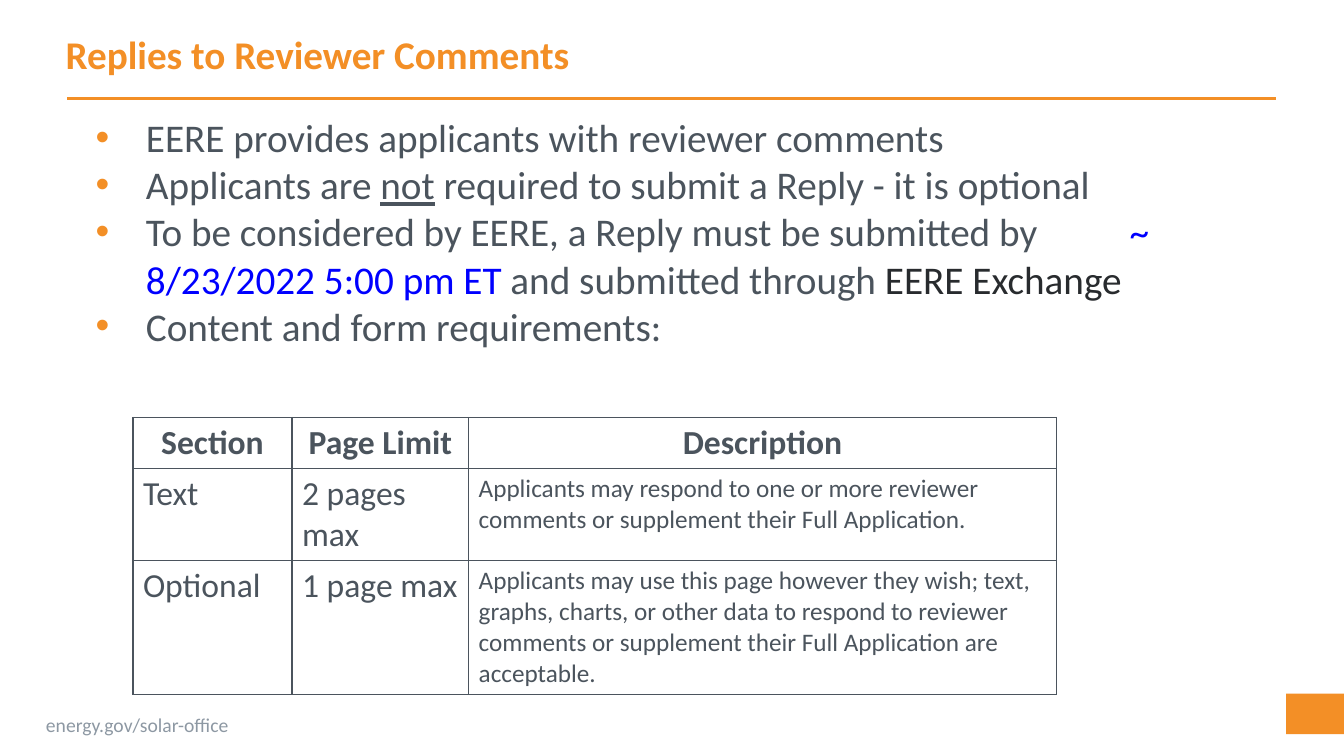
import dataclasses

import lxml.etree
import pptx
import pptx.dml.color
import pptx.enum.shapes
import pptx.enum.text
import pptx.oxml.ns
import pptx.util

Cm = pptx.util.Cm
Pt = pptx.util.Pt
qn = pptx.oxml.ns.qn
ALIGN = pptx.enum.text.PP_ALIGN
ANCHOR = pptx.enum.text.MSO_ANCHOR


@dataclasses.dataclass(frozen=True)
class Theme:
    font: str = "Calibri"
    orange: str = "F38F26"
    slate: str = "4B545D"
    dark: str = "282B2E"
    blue: str = "0000FF"
    grey: str = "8D98A3"
    white: str = "FFFFFF"
    large: int = 28
    medium: int = 24
    small: int = 18
    footer: int = 14


THEME = Theme()

# Each bullet is a list of (text, colour, underline)
BULLETS = [
    [("EERE provides applicants with reviewer comments", THEME.slate, False)],
    [("Applicants are ", THEME.slate, False),
     ("not", THEME.slate, True),
     (" required to submit a Reply - it is optional", THEME.slate, False)],
    [("To be considered by EERE, a Reply must be submitted by\t", THEME.slate, False),
     ("~ 8/23/2022 5:00 pm ET ", THEME.blue, False),
     ("and submitted through ", THEME.slate, False),
     ("EERE Exchange", THEME.dark, False)],
    [("Content and form requirements:", THEME.slate, False)],
]

REQUIREMENTS = [
    ("Section", "Page Limit", "Description"),
    ("Text", "2 pages max",
     "Applicants may respond to one or more reviewer comments or supplement "
     "their Full Application."),
    ("Optional", "1 page max",
     "Applicants may use this page however they wish; text, graphs, charts, or "
     "other data to respond to reviewer comments or supplement their Full "
     "Application are acceptable."),
]


def rgb(color):
    return pptx.dml.color.RGBColor.from_string(color)


def add_xml(parent, tag, **attrs):
    return lxml.etree.SubElement(parent, qn(tag), attrs)


def add_run(p, text, size, color, **extra):
    r = p.add_run()
    r.text = text
    formats = {"name": THEME.font, "size": Pt(size), "bold": False, **extra}
    for name, value in formats.items():
        setattr(r.font, name, value)
    r.font.color.rgb = rgb(color)


def set_frame(tf, **extra):
    formats = {"word_wrap": True, "vertical_anchor": ANCHOR.TOP,
               "auto_size": pptx.enum.text.MSO_AUTO_SIZE.NONE, **extra}
    for name, value in formats.items():
        setattr(tf, name, value)


def add_rule(s, x1, x2, y):
    sp = s.shapes.add_connector(
        pptx.enum.shapes.MSO_CONNECTOR.STRAIGHT, Cm(x1), Cm(y), Cm(x2), Cm(y))
    sp.line.color.rgb = rgb(THEME.orange)
    sp.line.width = Pt(2)
    add_xml(sp._element.spPr, "a:effectLst")


def add_block(s, *box):
    sp = s.shapes.add_shape(
        pptx.enum.shapes.MSO_SHAPE.RECTANGLE, *map(Cm, box))
    sp.shadow.inherit = False
    sp.fill.solid()
    sp.fill.fore_color.rgb = rgb(THEME.orange)
    sp.line.fill.background()


def add_footer(s, text, *box):
    tf = s.shapes.add_textbox(*map(Cm, box)).text_frame
    set_frame(tf, word_wrap=False)
    add_run(tf.paragraphs[0], text, THEME.footer, THEME.grey)


def format_title(s, text, *box):
    sp = s.shapes.title
    for name, value in zip(("left", "top", "width", "height"), box):
        setattr(sp, name, Cm(value))
    set_frame(sp.text_frame)
    p = sp.text_frame.paragraphs[0]
    p.alignment = ALIGN.LEFT
    add_run(p, text, THEME.large, THEME.orange, bold=True)


def set_bullet(p, indent, tab):
    pPr = p._p.get_or_add_pPr()
    pPr.set("marL", str(Cm(indent)))
    pPr.set("indent", str(-Cm(indent)))
    add_xml(add_xml(pPr, "a:buClr"), "a:srgbClr", val=THEME.orange)
    add_xml(pPr, "a:buFont", typeface="Arial")
    add_xml(pPr, "a:buChar", char="•")
    add_xml(add_xml(pPr, "a:tabLst"), "a:tab", pos=str(Cm(tab)), algn="l")


def add_bullets(s, bullets, *box):
    tf = s.shapes.add_textbox(*map(Cm, box)).text_frame
    set_frame(tf)
    for i, runs in enumerate(bullets):
        p = tf.add_paragraph() if i else tf.paragraphs[0]
        set_bullet(p, 1.27, 26.06)
        for text, color, underline in runs:
            add_run(p, text, THEME.large, color, underline=underline)


def format_cell(cell):
    tcPr = cell._tc.get_or_add_tcPr()
    for side in ("a:lnL", "a:lnR", "a:lnT", "a:lnB"):
        ln = add_xml(tcPr, side, w=str(Pt(1)))
        add_xml(add_xml(ln, "a:solidFill"), "a:srgbClr", val=THEME.slate)
    cell.fill.solid()
    cell.fill.fore_color.rgb = rgb(THEME.white)


def add_requirements(s, rows, left, top, widths, heights):
    table = s.shapes.add_table(
        len(rows), len(widths), Cm(left), Cm(top),
        Cm(sum(widths)), Cm(sum(heights))).table
    for column, width in zip(table.columns, widths):
        column.width = Cm(width)
    for i, (texts, height) in enumerate(zip(rows, heights)):
        table.rows[i].height = Cm(height)
        for j, text in enumerate(texts):
            cell = table.cell(i, j)
            format_cell(cell)
            header = i == 0
            p = cell.text_frame.paragraphs[0]
            p.alignment = ALIGN.CENTER if header else ALIGN.LEFT
            size = THEME.small if j == 2 and not header else THEME.medium
            add_run(p, text, size, THEME.slate, bold=header)


def main():
    prs = pptx.Presentation()
    prs.slide_width, prs.slide_height = Cm(33.87), Cm(19.05)
    s = prs.slides.add_slide(prs.slide_layouts[5])

    # Frame of the slide
    add_rule(s, 1.7, 32.16, 2.49)
    add_block(s, 32.41, 17.48, 1.46, 1.02)
    add_footer(s, "energy.gov/solar-office", 0.91, 17.83, 5.18, 0.86)

    # Content
    format_title(s, "Replies to Reviewer Comments", 1.4, 0.64, 21.59, 1.9)
    add_bullets(s, BULLETS, 2.16, 2.74, 28.35, 15.47)
    add_requirements(s, REQUIREMENTS, 3.35, 10.52,
                     (4.01, 4.45, 14.81), (1.27, 2.29, 3.38))

    prs.save("out.pptx")


if __name__ == "__main__":
    main()
